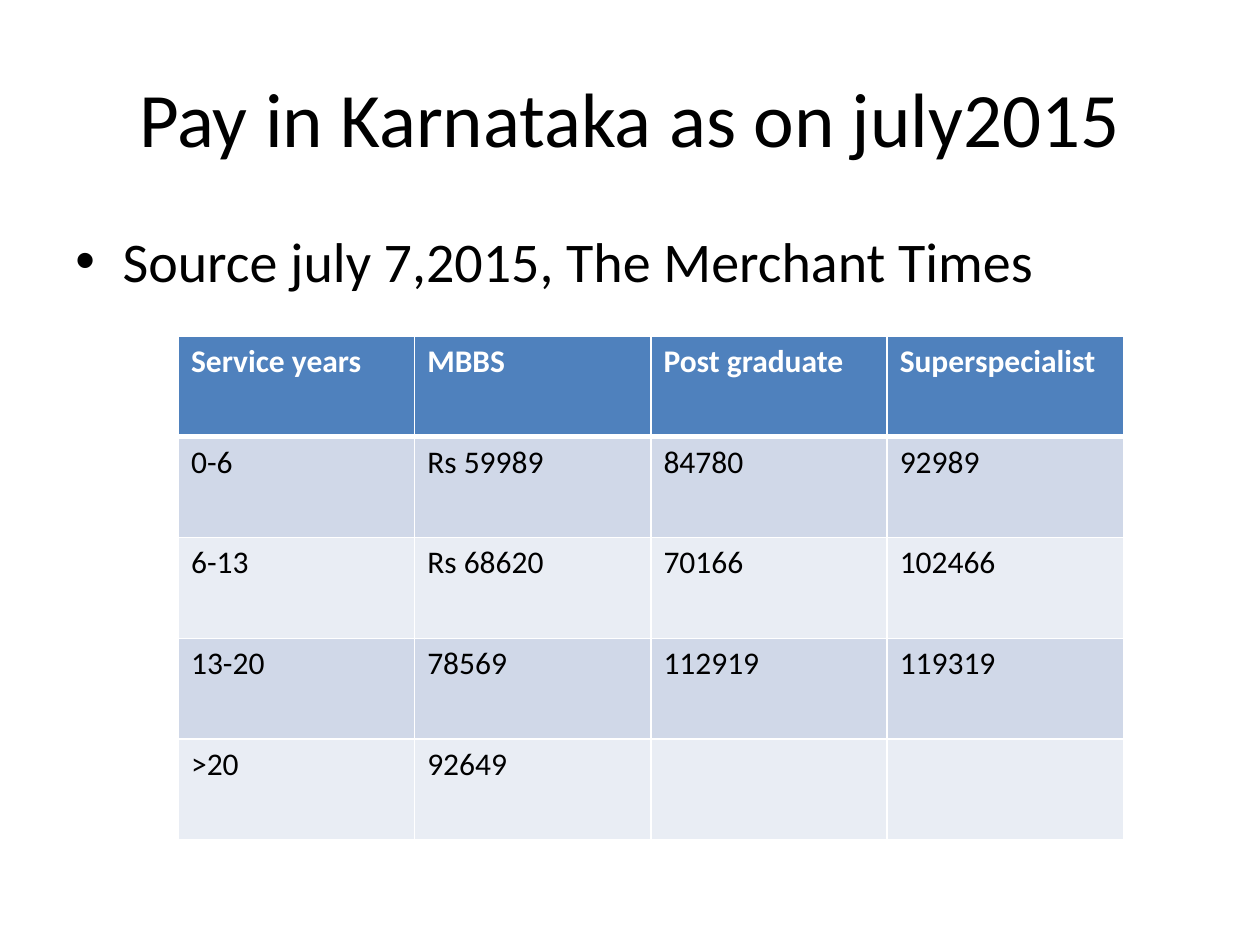
from lxml import etree
from pptx import Presentation
from pptx import util as u
from pptx.dml.color import RGBColor
from pptx.enum import text
from pptx.oxml.ns import qn

Pt = u.Pt
COLORS = {
    "ink": "000000",
    "white": "FFFFFF",
    "header": "4F81BD",
    "band_dark": "D0D8E8",
    "band_light": "E9EDF4",
}
PAY = [
    ["Service years", "MBBS", "Post graduate", "Superspecialist"],
    ["0-6", "Rs 59989", "84780", "92989"],
    ["6-13", "Rs 68620", "70166", "102466"],
    ["13-20", "78569", "112919", "119319"],
    [">20", "92649", "", ""],
]


def write(paragraph, words, color, **formats):
    run = paragraph.add_run()
    run.text = words
    run.font.color.rgb = RGBColor.from_string(COLORS[color])
    for name, value in {"name": "Calibri", **formats}.items():
        setattr(run.font, name, value)


def add_border(cell, side, width):
    """Draw a white line on one side (L, R, T or B) of a cell."""
    line = etree.SubElement(cell._tc.get_or_add_tcPr(), qn(f"a:ln{side}"), w=str(Pt(width)))
    fill = etree.SubElement(line, qn("a:solidFill"))
    etree.SubElement(fill, qn("a:srgbClr"), val=COLORS["white"])


deck = Presentation()
deck.slide_width, deck.slide_height = Pt(720), Pt(540)
slide = deck.slides.add_slide(deck.slide_layouts[6])

title = slide.shapes.add_textbox(Pt(36), Pt(21.6), Pt(648), Pt(90)).text_frame
title.word_wrap = True
title.vertical_anchor = text.MSO_ANCHOR.MIDDLE
title.paragraphs[0].alignment = text.PP_ALIGN.CENTER
write(title.paragraphs[0], "Pay in Karnataka as on july2015", "ink", size=Pt(44))

body = slide.shapes.add_textbox(Pt(36), Pt(126), Pt(648), Pt(356.4)).text_frame
body.word_wrap = True
source = body.paragraphs[0]
source.space_before = Pt(6.4)
write(source, "Source july 7,2015, The Merchant Times", "ink", size=Pt(32))
bullet_format = source._p.get_or_add_pPr()
for name, value in {"marL": Pt(27), "indent": -Pt(27)}.items():
    bullet_format.set(name, str(value))
etree.SubElement(bullet_format, qn("a:buFont"), typeface="Arial")
etree.SubElement(bullet_format, qn("a:buChar"), char="•")

pay_table = slide.shapes.add_table(
    len(PAY), len(PAY[0]), Pt(102), Pt(192), Pt(540), Pt(288)
).table
for row, values in enumerate(PAY):
    is_header = row == 0
    band = "header" if is_header else ("band_light", "band_dark")[row % 2]
    widths = {"L": 1, "R": 1, "T": 3 if row == 1 else 1, "B": 3 if is_header else 1}
    for column, value in enumerate(values):
        cell = pay_table.cell(row, column)
        for side, width in widths.items():
            add_border(cell, side, width)
        cell.fill.solid()
        cell.fill.fore_color.rgb = RGBColor.from_string(COLORS[band])
        if value:
            write(cell.text_frame.paragraphs[0], value,
                  "white" if is_header else "ink", size=Pt(18), bold=is_header)

deck.save("out.pptx")
